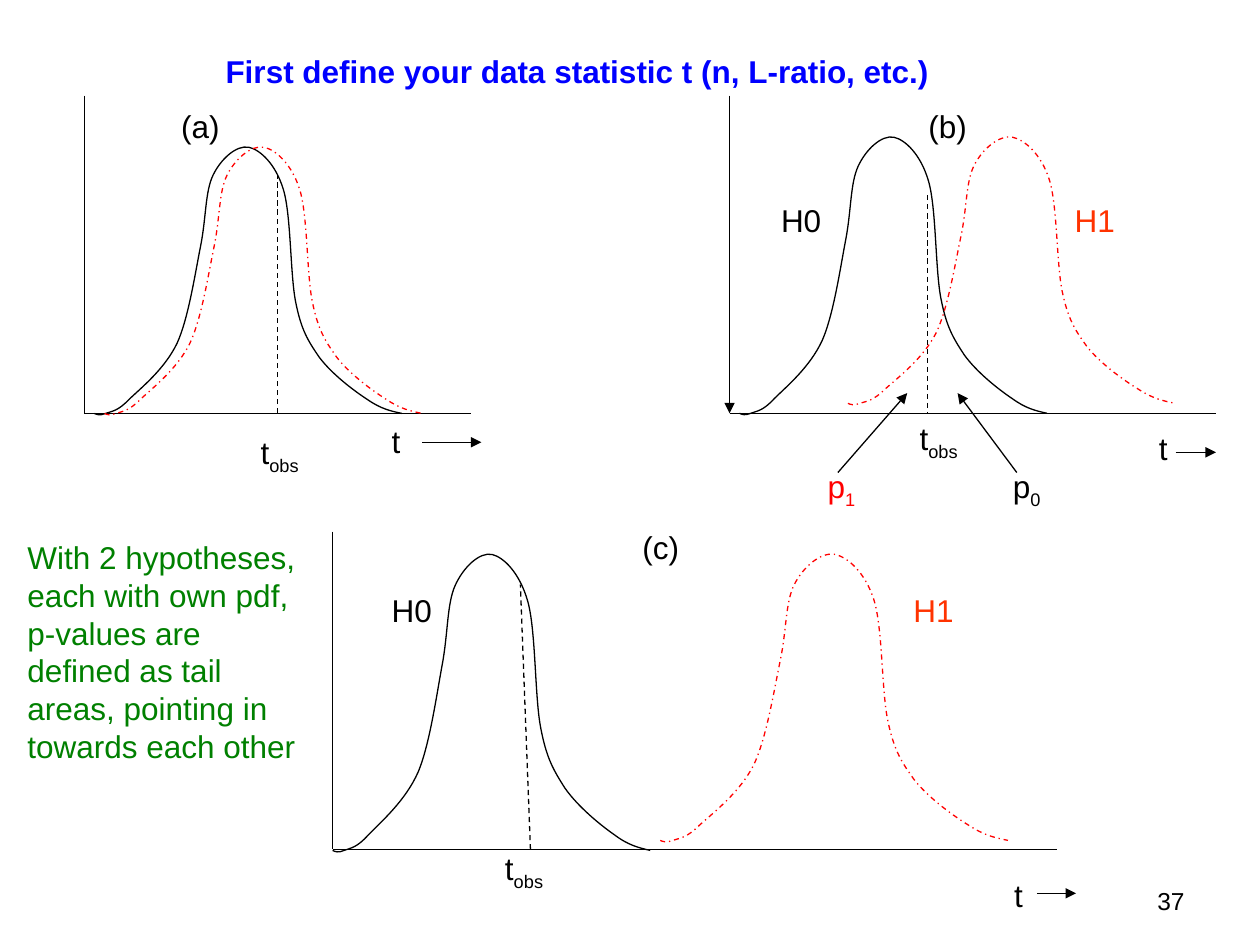
import pptx
import pptx.util
import pptx.dml.color
import pptx.enum.dml
import pptx.enum.text
import pptx.oxml.ns
from lxml import etree

Inches, Pt = pptx.util.Inches, pptx.util.Pt
DASH = pptx.enum.dml.MSO_LINE
ALIGN = pptx.enum.text.PP_ALIGN
ANCHOR = pptx.enum.text.MSO_ANCHOR
qn = pptx.oxml.ns.qn

COLORS = {"black": "000000", "red": "FF0000", "orange": "FF3300",
          "blue": "0000FF", "green": "008000"}

TITLE = "First define your data statistic t (n, L-ratio, etc.)"
NOTE = ("With 2 hypotheses, each with own pdf, p-values are defined as "
        "tail areas, pointing in towards each other")

# text, subscript, left, top, width, colour
LABELS = [
    ("(a)", "", 1.34, 0.8, 0.6, "black"),
    ("(b)", "", 7.27, 0.8, 0.6, "black"),
    ("(c)", "", 5.0, 4.14, 0.87, "black"),
    ("H0", "", 6.1, 1.55, 0.65, "black"),
    ("H1", "", 8.43, 1.55, 0.65, "orange"),
    ("H0", "", 3.01, 4.64, 0.65, "black"),
    ("H1", "", 7.15, 4.64, 0.65, "orange"),
    ("p", "1", 6.47, 3.66, 0.6, "red"),
    ("p", "0", 7.94, 3.66, 0.6, "black"),
    ("t", "obs", 1.97, 3.39, 0.65, "black"),
    ("t", "obs", 7.2, 3.28, 0.63, "black"),
    ("t", "obs", 3.91, 6.69, 0.6, "black"),
    ("t", "", 3.01, 3.3, 0.4, "black"),
    ("t", "", 9.1, 3.36, 0.4, "black"),
    ("t", "", 7.95, 6.9, 0.71, "black"),
    (NOTE, "", 0.12, 4.22, 2.36, "green"),
]

# x1, y1, x2, y2
AXES = [(0.67, 0.76, 0.67, 3.28), (0.67, 3.28, 3.74, 3.28),
        (5.79, 3.28, 9.65, 3.28),
        (2.64, 4.22, 2.64, 6.74), (2.64, 6.74, 8.39, 6.74)]
ARROWS = [(5.79, 0.76, 5.79, 3.28),
          (3.35, 3.51, 3.82, 3.51), (9.33, 3.59, 9.65, 3.59),
          (8.23, 7.09, 8.54, 7.09),
          (6.65, 3.75, 7.2, 3.12), (8.07, 3.75, 7.6, 3.12)]
OBSERVED = [(2.2, 3.28, 2.2, 1.39), (7.36, 1.55, 7.36, 3.28),
            (4.21, 6.74, 4.13, 4.64)]

# left, top, width, height, colour, dash
CURVES = [
    (0.75, 1.15, 2.44, 2.15, "black", None),
    (0.83, 1.15, 2.52, 2.15, "red", DASH.DASH_DOT),
    (5.87, 1.07, 2.44, 2.23, "black", None),
    (6.73, 1.07, 2.6, 2.15, "red", DASH.DASH_DOT),
    (2.64, 4.38, 2.52, 2.39, "black", None),
    (5.24, 4.38, 2.76, 2.31, "red", DASH.DASH_DOT),
]

# Start point, then two control points and an end point per Bezier segment
BELL_W, BELL_H = 2.75, 2.31
BELL = [
    (0, 2.29),
    (0.02, 2.3), (0.05, 2.31), (0.1, 2.29),
    (0.16, 2.27), (0.21, 2.27), (0.31, 2.17),
    (0.42, 2.07), (0.63, 1.91), (0.74, 1.69),
    (0.84, 1.48), (0.9, 1.1), (0.95, 0.86),
    (1, 0.62), (0.99, 0.4), (1.06, 0.26),
    (1.13, 0.12), (1.27, 0), (1.38, 0.02),
    (1.48, 0.04), (1.62, 0.16), (1.69, 0.38),
    (1.76, 0.6), (1.75, 1.1), (1.8, 1.34),
    (1.85, 1.58), (1.91, 1.67), (2.01, 1.81),
    (2.12, 1.95), (2.31, 2.09), (2.44, 2.17),
    (2.56, 2.25), (2.65, 2.27), (2.75, 2.29),
]


def rgb(name):
    return pptx.dml.color.RGBColor.from_string(COLORS[name])


def style_line(sp, color, dash=None):
    sp.line.color.rgb = rgb(color)
    sp.line.width = Pt(0.75)
    if dash is not None:
        sp.line.dash_style = dash


def add_line(slide, ends, dash=None, arrow=False):
    sp = slide.shapes.add_connector(1, *[Inches(v) for v in ends])
    style_line(sp, "black", dash)
    if arrow:
        etree.SubElement(sp.line._get_or_add_ln(), qn("a:tailEnd"), type="triangle")
    etree.SubElement(sp._element.spPr, qn("a:effectLst"))


def add_curve(slide, left, top, width, height, color, dash):
    """Scale the bell profile to a box and draw it with cubic segments."""
    pts = [(Inches(left + x * width / BELL_W), Inches(top + y * height / BELL_H))
           for x, y in BELL]
    builder = slide.shapes.build_freeform(*pts[0])
    builder.add_line_segments(pts[1:], close=False)
    sp = builder.convert_to_shape()
    segments = list(sp._element.iter(qn("a:lnTo")))
    for i in range(0, len(segments), 3):
        cubic = etree.Element(qn("a:cubicBezTo"))
        segments[i].addprevious(cubic)
        for segment in segments[i:i + 3]:
            cubic.append(segment[0])
            segment.getparent().remove(segment)
    sp.fill.background()
    sp.shadow.inherit = False
    style_line(sp, color, dash)


def add_run(p, text, color, size=18, bold=False, subscript=False):
    r = p.add_run()
    r.text = text
    r.font.name = "Arial"
    r.font.size = Pt(size)
    r.font.bold = bold
    r.font.color.rgb = rgb(color)
    if subscript:
        r.font._element.set("baseline", "-25000")


def add_box(slide, left, top, width, height=0.4):
    sp = slide.shapes.add_textbox(Inches(left), Inches(top), Inches(width), Inches(height))
    sp.text_frame.word_wrap = True
    return sp.text_frame


def main():
    prs = pptx.Presentation()
    prs.slide_width, prs.slide_height = Inches(10), Inches(7.5)
    slide = prs.slides.add_slide(prs.slide_layouts[5])

    title = slide.shapes.title
    title.left, title.top = Inches(1.69), Inches(0.36)
    title.width, title.height = Inches(7), Inches(0.4)
    title.text_frame.vertical_anchor = ANCHOR.TOP
    p = title.text_frame.paragraphs[0]
    p.alignment = ALIGN.LEFT
    add_run(p, TITLE, "blue", bold=True)

    for ends in AXES:
        add_line(slide, ends)
    for curve in CURVES:
        add_curve(slide, *curve)
    for ends in OBSERVED:
        add_line(slide, ends, dash=DASH.DASH)
    for ends in ARROWS:
        add_line(slide, ends, arrow=True)

    for text, subscript, left, top, width, color in LABELS:
        height = 1.92 if text == NOTE else 0.4
        p = add_box(slide, left, top, width, height).paragraphs[0]
        add_run(p, text, color)
        if subscript:
            add_run(p, subscript, color, subscript=True)

    tf = add_box(slide, 7.17, 6.95, 2.33)
    tf.vertical_anchor = ANCHOR.MIDDLE
    tf.paragraphs[0].alignment = ALIGN.RIGHT
    add_run(tf.paragraphs[0], "37", "black", size=14)

    prs.save("out.pptx")


if __name__ == "__main__":
    main()
